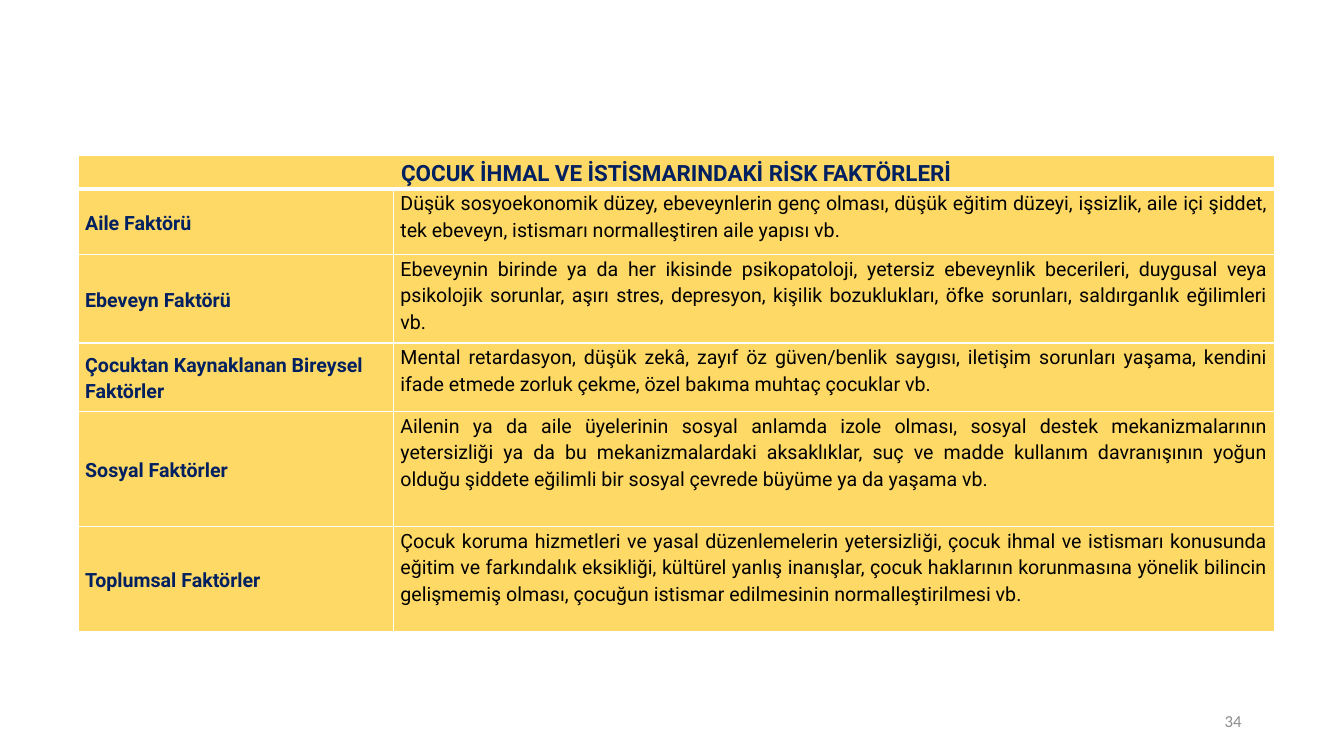
from lxml import etree
from pptx import Presentation
from pptx.dml.color import RGBColor
from pptx.enum.text import MSO_ANCHOR as ANCHOR, PP_ALIGN as ALIGN
from pptx.oxml import parse_xml
from pptx.oxml.ns import nsdecls
from pptx.util import Pt

HEADING = "ÇOCUK İHMAL VE İSTİSMARINDAKİ RİSK FAKTÖRLERİ"
FACTORS = [
    ("Aile Faktörü",
     "Düşük sosyoekonomik düzey, ebeveynlerin genç olması, düşük eğitim düzeyi, "
     "işsizlik, aile içi şiddet, tek ebeveyn, istismarı normalleştiren aile yapısı vb."),
    ("Ebeveyn Faktörü",
     "Ebeveynin birinde ya da her ikisinde psikopatoloji, yetersiz ebeveynlik "
     "becerileri, duygusal veya psikolojik sorunlar, aşırı stres, depresyon, kişilik "
     "bozuklukları, öfke sorunları, saldırganlık eğilimleri vb."),
    ("Çocuktan Kaynaklanan Bireysel Faktörler",
     "Mental retardasyon, düşük zekâ, zayıf öz güven/benlik saygısı, iletişim sorunları "
     "yaşama, kendini ifade etmede zorluk çekme, özel bakıma muhtaç çocuklar vb."),
    ("Sosyal Faktörler",
     "Ailenin ya da aile üyelerinin sosyal anlamda izole olması, sosyal destek "
     "mekanizmalarının yetersizliği ya da bu mekanizmalardaki aksaklıklar, suç ve madde "
     "kullanım davranışının yoğun olduğu şiddete eğilimli bir sosyal çevrede büyüme ya "
     "da yaşama vb."),
    ("Toplumsal Faktörler",
     "Çocuk koruma hizmetleri ve yasal düzenlemelerin yetersizliği, çocuk ihmal ve "
     "istismarı konusunda eğitim ve farkındalık eksikliği, kültürel yanlış inanışlar, "
     "çocuk haklarının korunmasına yönelik bilincin gelişmemiş olması, çocuğun istismar "
     "edilmesinin normalleştirilmesi vb."),
]
PAGE_NUMBER = "34"

COL_WIDTHS = [225.2, 629.4]
ROW_HEIGHTS = [23.8, 46.8, 63.3, 48.8, 82.4, 74.9]
TABLE_LEFT, TABLE_TOP = 55.8, 111.1

YELLOW = RGBColor(0xFF, 0xD9, 0x66)
NAVY = RGBColor(0x00, 0x20, 0x60)
BLACK = RGBColor(0, 0, 0)
GRAY = RGBColor(0x8C, 0x8C, 0x8C)
WHITE = RGBColor(0xFF, 0xFF, 0xFF)


def format_text(p, font, size, color, bold=False, align=ALIGN.LEFT):
    p.alignment = align
    for r in p.runs:
        r.font.name = font
        r.font.size = Pt(size)
        r.font.bold = bold
        r.font.color.rgb = color


def style_cell(cell, bottom=1, anchor=ANCHOR.MIDDLE):
    cell.margin_left = cell.margin_right = Pt(5)
    cell.margin_top = cell.margin_bottom = Pt(0)
    cell.vertical_anchor = anchor
    cell.fill.solid()
    cell.fill.fore_color.rgb = YELLOW
    # Borders come before the fill in the cell properties
    widths = {"lnL": 1, "lnR": 1, "lnT": 1, "lnB": bottom}
    for i, (side, width) in enumerate(widths.items()):
        line = parse_xml(
            f'<a:{side} {nsdecls("a")} w="{Pt(width)}"><a:solidFill>'
            f'<a:srgbClr val="{WHITE}"/></a:solidFill></a:{side}>')
        cell._tc.get_or_add_tcPr().insert(i, line)


def write_cell(cell, text, size, color, bold, align):
    p = cell.text_frame.paragraphs[0]
    p.text = text
    p.line_spacing = 1.15
    format_text(p, "Roboto", size, color, bold, align)


prs = Presentation()
prs.slide_width, prs.slide_height = Pt(960), Pt(540)
slide = prs.slides.add_slide(prs.slide_layouts[6])

# Risk factor table
table = slide.shapes.add_table(
    len(ROW_HEIGHTS), len(COL_WIDTHS), Pt(TABLE_LEFT), Pt(TABLE_TOP),
    Pt(sum(COL_WIDTHS)), Pt(sum(ROW_HEIGHTS))).table
for col, width in zip(table.columns, COL_WIDTHS):
    col.width = Pt(width)
for row, height in zip(table.rows, ROW_HEIGHTS):
    row.height = Pt(height)

# Heading row across both columns
for cell in table.rows[0].cells:
    style_cell(cell, bottom=3)
heading = table.cell(0, 0)
heading.merge(table.cell(0, 1))
write_cell(heading, HEADING, 16, NAVY, True, ALIGN.CENTER)

# One row for each factor
for i, (factor, description) in enumerate(FACTORS, start=1):
    name_cell, text_cell = table.rows[i].cells
    style_cell(name_cell)
    write_cell(name_cell, factor, 14, NAVY, True, ALIGN.LEFT)
    style_cell(text_cell, anchor=ANCHOR.TOP)
    write_cell(text_cell, description, 14, BLACK, False, ALIGN.JUSTIFY)

# Page number
tf = slide.shapes.add_textbox(Pt(678), Pt(500.5), Pt(216), Pt(28.75)).text_frame
tf.word_wrap = True
tf.vertical_anchor = ANCHOR.MIDDLE
tf.text = PAGE_NUMBER
format_text(tf.paragraphs[0], "Calibri", 12, GRAY, align=ALIGN.RIGHT)

prs.save("out.pptx")
